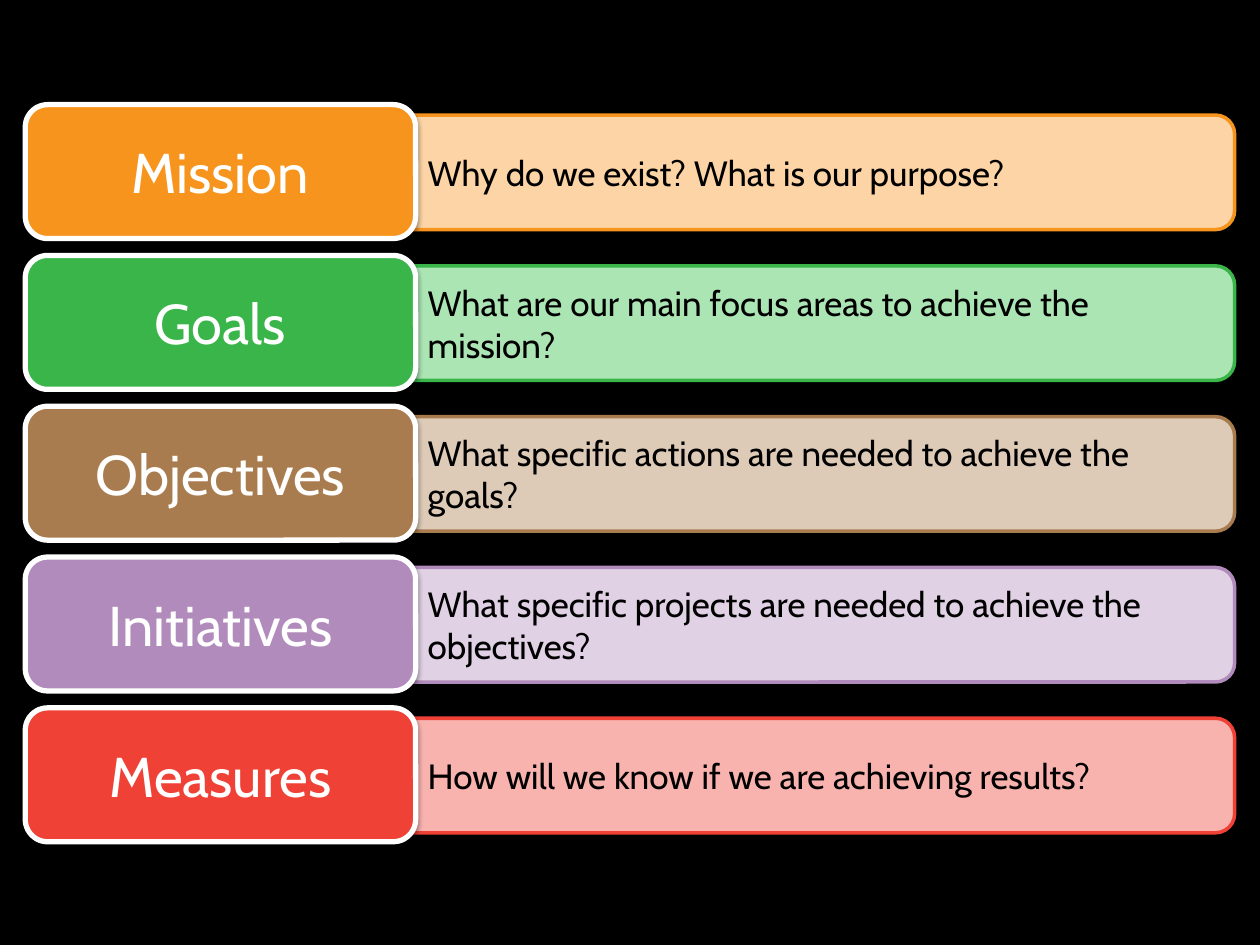
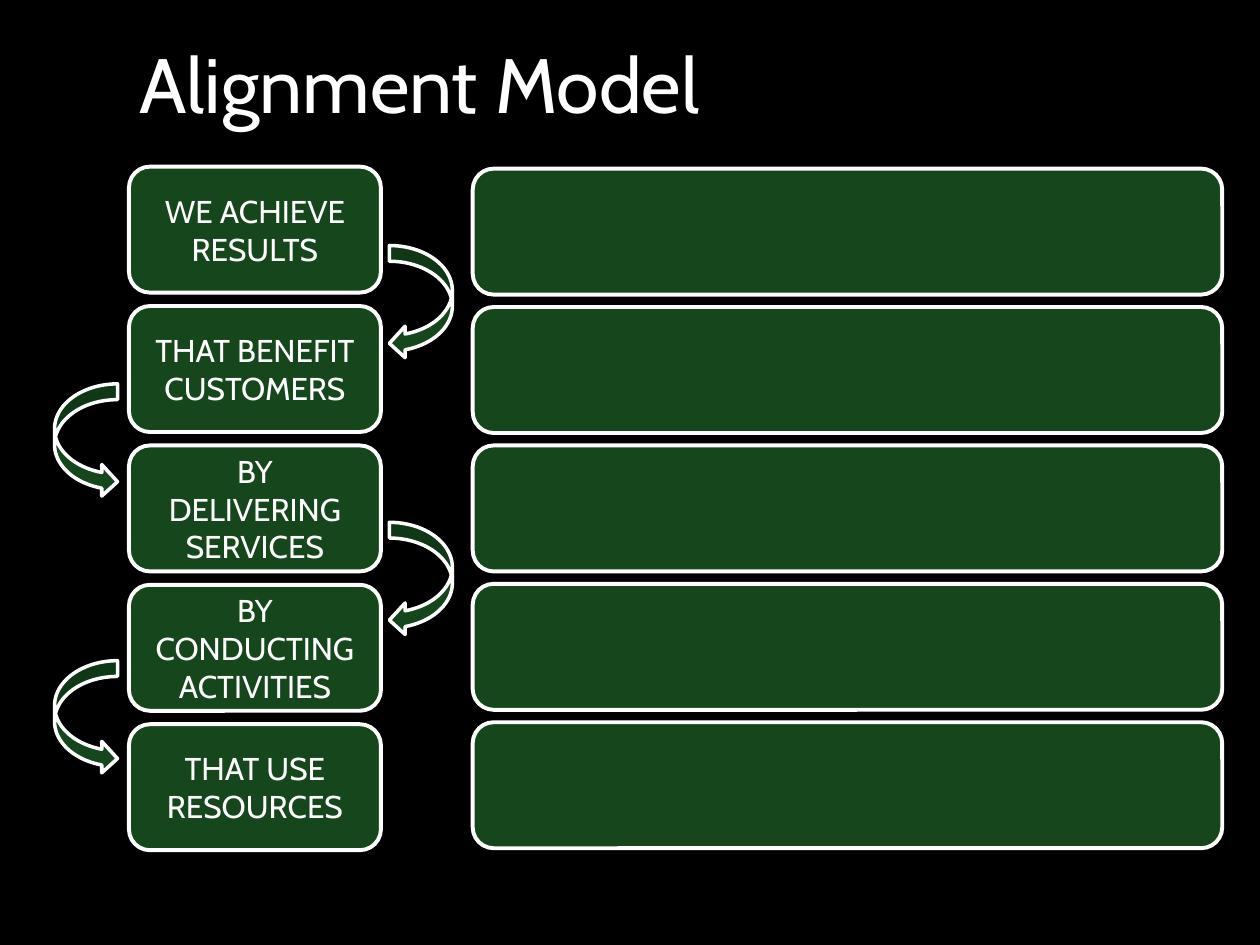
import pptx
import pptx.dml.color
import pptx.enum.shapes
import pptx.enum.text
import pptx.oxml
import pptx.oxml.ns
import pptx.util

Cm = pptx.util.Cm
Pt = pptx.util.Pt
PRESET = pptx.enum.shapes.MSO_SHAPE
ALIGN = pptx.enum.text.PP_ALIGN

FONT = "Cabin"
BLACK = "000000"
WHITE = "FFFFFF"
DARK_GREEN = "16461C"

# Label, question, strong colour, pale colour
PLAN_LEVELS = [
    ("Mission", "Why do we exist? What is our purpose?", "F7941E", "FCD4A5"),
    ("Goals", "What are our main focus areas to achieve the mission?", "39B54A", "ACE5B4"),
    ("Objectives", "What specific actions are needed to achieve the goals?", "A97C50", "DDCBB8"),
    ("Initiatives", "What specific projects are needed to achieve the objectives?", "B18BBB", "E0D1E4"),
    ("Measures", "How will we know if we are achieving results?", "EF4136", "F9B3AF"),
]
ALIGNMENT_STEPS = [
    "WE ACHIEVE RESULTS",
    "THAT BENEFIT CUSTOMERS",
    "BY DELIVERING SERVICES",
    "BY CONDUCTING ACTIVITIES",
    "THAT USE RESOURCES",
]


def color(hex_string):
    return pptx.dml.color.RGBColor.from_string(hex_string)


def write_text(shape, text, size, text_color=WHITE, align=ALIGN.LEFT, inset=0.25):
    """Fill a shape with one vertically centred paragraph; inset in cm."""
    frame = shape.text_frame
    frame.word_wrap = True
    frame.vertical_anchor = pptx.enum.text.MSO_ANCHOR.MIDDLE
    frame.margin_left = Cm(inset)
    if align == ALIGN.CENTER:
        frame.margin_right = Cm(inset)
    paragraph = frame.paragraphs[0]
    paragraph.text = text
    paragraph.alignment = align
    paragraph.font.name = FONT
    paragraph.font.size = Pt(size)
    paragraph.font.color.rgb = color(text_color)


class Deck:
    """Holds the shared style and the slide being built; lengths in cm."""

    def __init__(self):
        self.presentation = pptx.Presentation()
        self.presentation.slide_width = Cm(25.4)
        self.presentation.slide_height = Cm(19.05)
        self.slide = None

    def new_slide(self):
        self.slide = self.presentation.slides.add_slide(self.presentation.slide_layouts[6])
        background = self.slide.background.fill
        background.solid()
        background.fore_color.rgb = color(BLACK)

    def title(self, text):
        box = self.slide.shapes.add_textbox(Cm(2.57), Cm(0.84), Cm(22.83), Cm(1.65))
        write_text(box, text, 44)

    def shape(self, preset, left, top, width, height, fill, line=WHITE, line_width=2.25):
        shape = self.slide.shapes.add_shape(preset, Cm(left), Cm(top), Cm(width), Cm(height))
        shape.fill.solid()
        shape.fill.fore_color.rgb = color(fill)
        shape.line.color.rgb = color(line)
        shape.line.width = Pt(line_width)
        shape.shadow.inherit = False
        return shape

    def box(self, *position, **style):
        return self.shape(PRESET.ROUNDED_RECTANGLE, *position, **style)

    def drop_shadow(self, shape):
        effects = shape.element.spPr.find(pptx.oxml.ns.qn("a:effectLst"))
        effects.append(pptx.oxml.parse_xml(
            f'<a:outerShdw {pptx.oxml.ns.nsdecls("a")} blurRad="{Pt(3.1)}" dist="{Pt(1.6)}" '
            'dir="5400000" rotWithShape="0"><a:srgbClr val="000000">'
            '<a:alpha val="38000"/></a:srgbClr></a:outerShdw>'))


def build_plan_levels(deck):
    deck.new_slide()
    for row, (name, question, strong, pale) in enumerate(PLAN_LEVELS):
        offset = 3.04 * row
        answer = deck.box(7.62, 2.32 + offset, 17.27, 2.31, fill=pale, line=strong, line_width=2)
        write_text(answer, question, 20, text_color=BLACK, inset=0.89)
        label = deck.box(0.51, 2.11 + offset, 7.87, 2.7, fill=strong, line_width=3)
        deck.drop_shadow(label)
        write_text(label, name, 32, align=ALIGN.CENTER)


def build_alignment_model(deck):
    deck.new_slide()
    deck.title("Alignment Model")

    # Step labels with an empty box beside each
    for row, step in enumerate(ALIGNMENT_STEPS):
        deck.box(9.53, 3.4 + 2.79 * row, 15.11, 2.54, fill=DARK_GREEN)
        label = deck.box(2.6, 3.36 + 2.81 * row, 5.08, 2.54, fill=DARK_GREEN)
        write_text(label, step, 18, align=ALIGN.CENTER, inset=0.33)

    # Curved arrows alternate between the right and left of the labels
    sides = [(PRESET.CURVED_LEFT_ARROW, 7.85), (PRESET.CURVED_RIGHT_ARROW, 1.1)]
    for gap in range(len(ALIGNMENT_STEPS) - 1):
        preset, left = sides[gap % 2]
        deck.shape(preset, left, 4.95 + 2.79 * gap, 1.27, 2.29, fill=DARK_GREEN, line_width=2)


def main():
    deck = Deck()
    build_plan_levels(deck)
    build_alignment_model(deck)
    deck.presentation.save("out.pptx")


if __name__ == "__main__":
    main()
